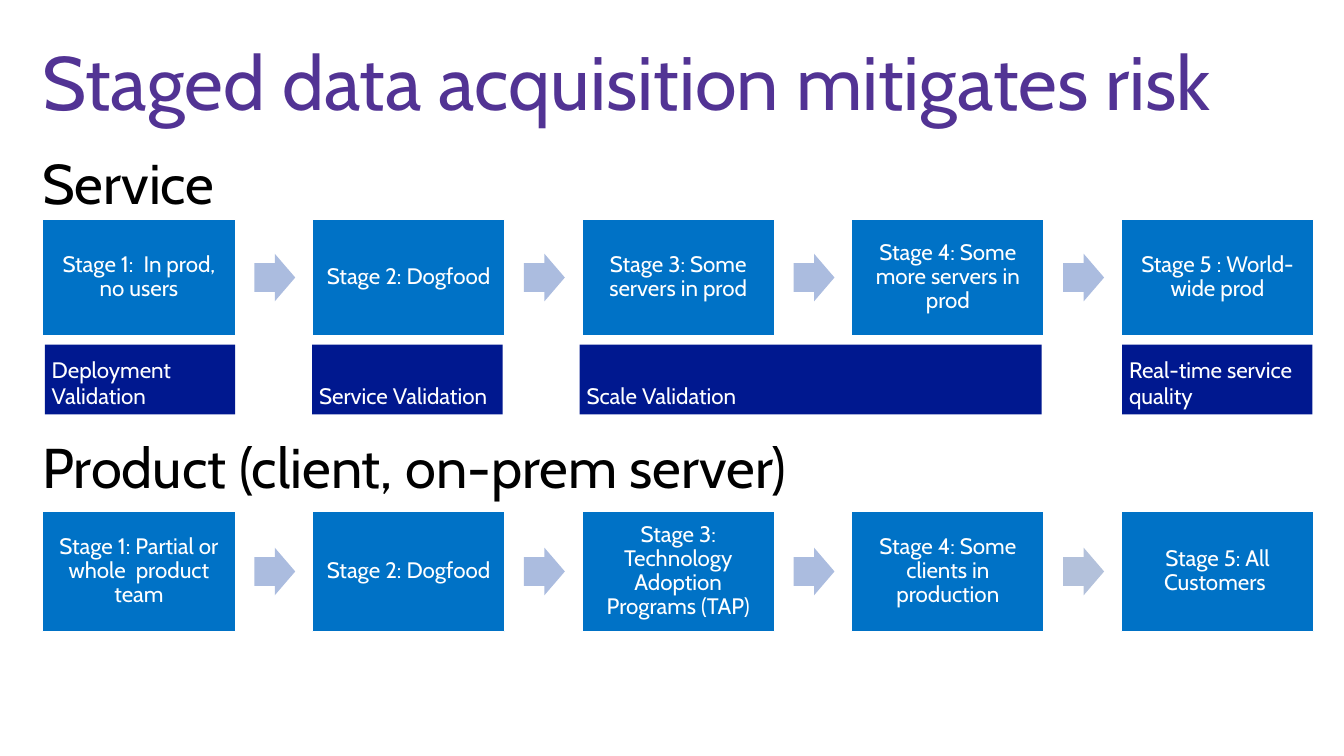
from dataclasses import dataclass
from pptx import Presentation
from pptx.dml.color import RGBColor as RGB
from pptx.enum.shapes import MSO_SHAPE as Kind
from pptx.enum.text import MSO_ANCHOR as Anchor, MSO_AUTO_SIZE as Fit, PP_ALIGN as Align
from pptx.oxml.xmlchemy import OxmlElement as Node
from pptx.util import Pt


@dataclass(frozen=True)
class Theme:
    face: str = "Cabin"
    title: str = "523394"
    ink: str = "000000"
    white: str = "FFFFFF"
    stage: str = "0072C6"
    check: str = "00188F"
    arrow: str = "ABBCDF"
    last: str = "B3C1DB"
    huge: int = 54
    head: int = 40
    small: int = 16


class Deck:
    def __init__(self, theme):
        self.theme = theme
        self.file = Presentation()
        self.file.slide_width, self.file.slide_height = Pt(960), Pt(540)
        self.slide = self.file.slides.add_slide(self.file.slide_layouts[1])

    def style(self, para, size, color, align=Align.LEFT):
        para.alignment = align
        font = para.font
        font.name, font.size = self.theme.face, Pt(size)
        font.color.rgb = RGB.from_string(color)

    def place(self, item, box):
        item.left, item.top, item.width, item.height = map(Pt, box)
        frame = item.text_frame
        frame.word_wrap, frame.auto_size = True, Fit.NONE
        return frame

    def title(self, text, box):
        frame = self.place(self.slide.shapes.title, box)
        frame.text, frame.vertical_anchor = text, Anchor.MIDDLE
        self.style(frame.paragraphs[0], self.theme.huge, self.theme.title)

    def heads(self, lines, gap, box):
        frame = self.place(self.slide.placeholders[1], box)
        frame.text, frame.vertical_anchor = "\n".join(lines), Anchor.TOP
        for spot, para in enumerate(frame.paragraphs):
            props = para._p.get_or_add_pPr()
            props.set("marL", "0")
            props.set("indent", "0")
            props.append(Node("a:buNone"))
            para.space_before = Pt(gap if spot else 0)
            self.style(para, self.theme.head, self.theme.ink)

    def shape(self, kind, box, fill):
        item = self.slide.shapes.add_shape(kind, *map(Pt, box))
        item.shadow.inherit = False
        item.fill.solid()
        item.fill.fore_color.rgb = RGB.from_string(fill)
        item.line.fill.background()
        return item

    def label(self, item, text, anchor, align, pad):
        frame = item.text_frame
        frame.word_wrap, frame.vertical_anchor = True, anchor
        frame.margin_left = frame.margin_right = Pt(5)
        frame.margin_top = frame.margin_bottom = Pt(pad)
        frame.text = text
        para = frame.paragraphs[0]
        self.style(para, self.theme.small, self.theme.white, align)
        return para

    def stage(self, text, box):
        item = self.shape(Kind.RECTANGLE, box, self.theme.stage)
        item.line.color.rgb = RGB.from_string(self.theme.white)
        item.line.width = Pt(0.85)
        para = self.label(item, text, Anchor.MIDDLE, Align.CENTER, 5)
        para.line_spacing = 0.9

    def arrow(self, box, fill):
        item = self.shape(Kind.RIGHT_ARROW, box, fill)
        item.adjustments[0], item.adjustments[1] = 0.6, 0.5

    def check(self, text, box):
        item = self.shape(Kind.RECTANGLE, box, self.theme.check)
        self.label(item, text, Anchor.BOTTOM, Align.LEFT, 3.6)

    def flow(self, names, top, high, last):
        left, step, wide = 30.5, 192.6, 137.5
        for spot, name in enumerate(names):
            x = left + spot * step
            self.stage(name, (x, top, wide, high))
            if spot < len(names) - 1:
                fill = last if spot == len(names) - 2 else self.theme.arrow
                self.arrow((x + 151.2, top + (high - 34) / 2, 29.2, 34), fill)


def main():
    theme = Theme()
    deck = Deck(theme)
    deck.title("Staged data acquisition mitigates risk", (23, 12.2, 985, 90))
    deck.heads(["Service", "Product (client, on-prem server)"], 155, (23, 102.5, 882, 360))
    deck.flow(["Stage 1: Partial or whole  product team", "Stage 2: Dogfood",
               "Stage 3: Technology Adoption Programs (TAP)",
               "Stage 4: Some clients in production", "Stage 5: All Customers "],
              365, 86.4, theme.last)
    deck.flow(["Stage 1:  In prod, no users", "Stage 2: Dogfood",
               "Stage 3: Some servers in prod", "Stage 4: Some more servers in prod",
               "Stage 5 : World-wide prod"], 157, 82.5, theme.arrow)
    for text, left, wide in [("Deployment Validation", 32, 136),
                             ("Service Validation", 223, 136),
                             ("Scale Validation", 414, 330),
                             ("Real-time service quality", 801.5, 136)]:
        deck.check(text, (left, 246.2, wide, 49.8))
    deck.file.save("out.pptx")


if __name__ == "__main__":
    main()
